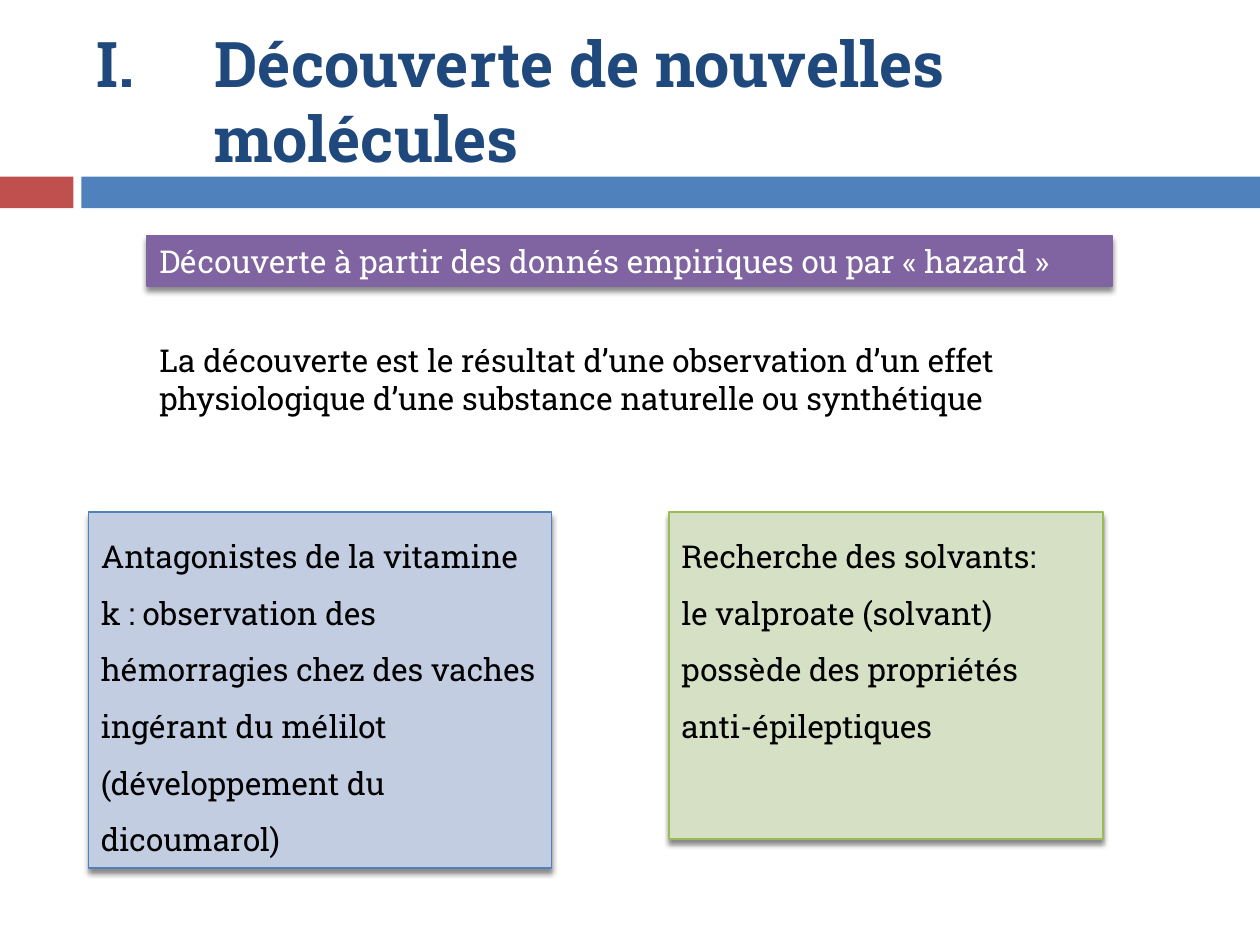
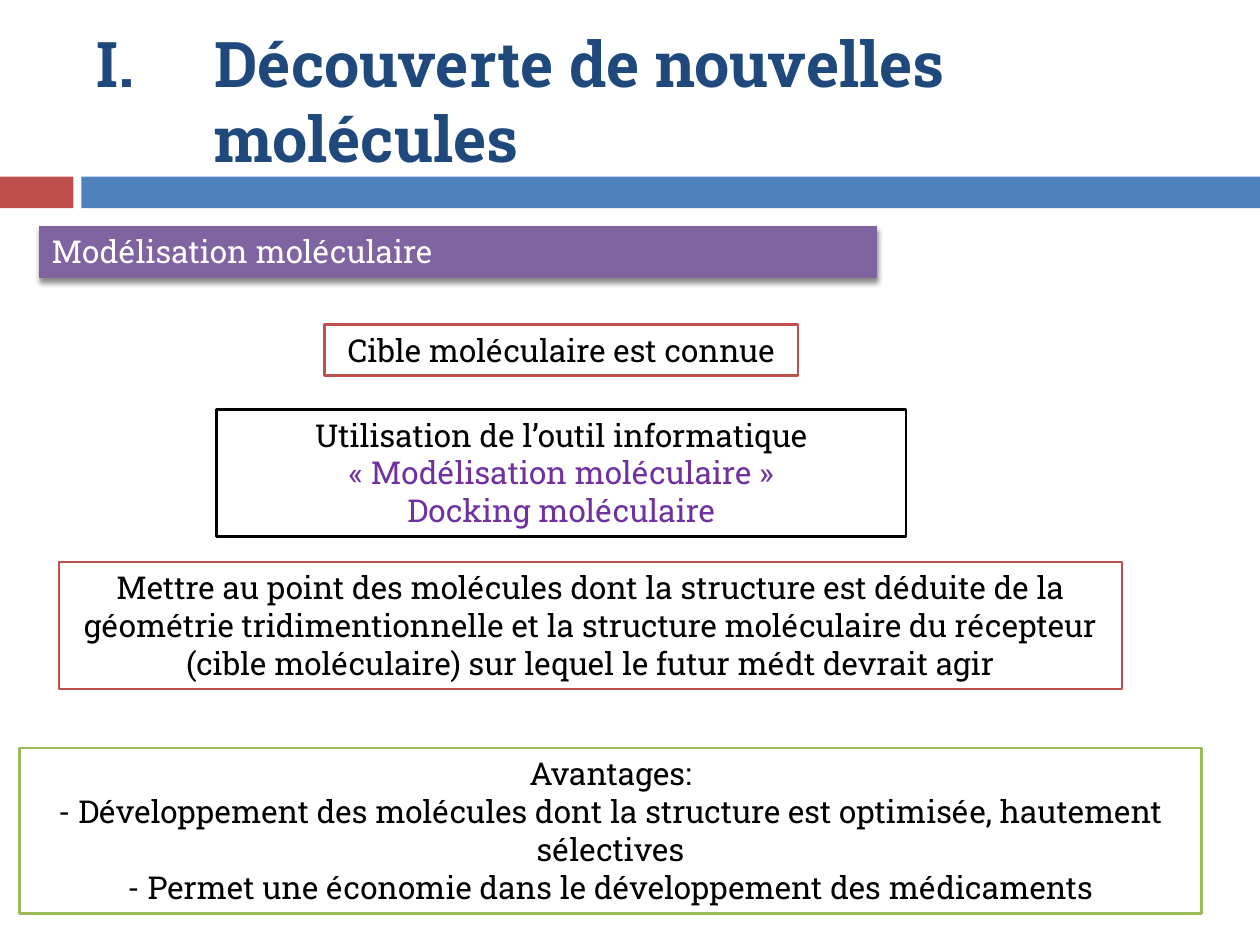
from dataclasses import dataclass

from lxml import etree
from pptx import Presentation
from pptx.dml.color import RGBColor
from pptx.enum import shapes, text
from pptx.oxml import ns
from pptx.util import Pt

FONT = "Roboto Slab"
BODY_SIZE = 18
TITLE_SIZE = 36
TITLE_INDENT = 67.5

BLACK = RGBColor(0x00, 0x00, 0x00)
WHITE = RGBColor(0xFF, 0xFF, 0xFF)
NAVY = RGBColor(0x1F, 0x49, 0x7D)
BLUE = RGBColor(0x4F, 0x81, 0xBD)
PALE_BLUE = RGBColor(0xC2, 0xCD, 0xE1)
RED = RGBColor(0xC0, 0x50, 0x4D)
GREEN = RGBColor(0x9B, 0xBB, 0x59)
PALE_GREEN = RGBColor(0xD5, 0xE0, 0xC4)
PURPLE = RGBColor(0x80, 0x64, 0xA2)
VIOLET = RGBColor(0x70, 0x30, 0xA0)

LEFT = text.PP_ALIGN.LEFT
CENTER = text.PP_ALIGN.CENTER


@dataclass(frozen=True)
class Line:
    words: str
    color: RGBColor = BLACK


@dataclass(frozen=True)
class Box:
    left: float
    top: float
    width: float
    height: float
    lines: tuple[Line, ...] = ()
    fill: RGBColor | None = None
    border: RGBColor | None = None
    border_width: float = 0.79
    align: text.PP_ALIGN = LEFT
    spacing: float = 1.0
    shadow: bool = False


def banner(left: float, top: float, width: float, words: str) -> Box:
    return Box(left, top, width, 29, (Line(words, WHITE),), PURPLE, PURPLE, shadow=True)


def example(left: float, width: float, height: float, fill: RGBColor,
            border: RGBColor, *words: str) -> Box:
    return Box(left, 292.5, width, height, tuple(map(Line, words)), fill, border,
               spacing=1.5, shadow=True)


def step(left: float, top: float, width: float, height: float,
         border: RGBColor, *lines: Line) -> Box:
    return Box(left, top, width, height, lines, WHITE, border, 1.5, CENTER)


TITLE = "Découverte de nouvelles molécules"
BANDS = (Box(0, 101, 42, 18, fill=RED), Box(46.5, 101, 673.5, 18, fill=BLUE))

EMPIRICAL = (
    banner(84, 134.5, 551.5, "Découverte à partir des donnés empiriques ou par « hazard »"),
    Box(84, 191.25, 512, 51, (Line(
        "La découverte est le résultat d’une observation d’un effet "
        "physiologique d’une substance naturelle ou synthétique"),)),
    example(50.5, 264.5, 203.5, PALE_BLUE, BLUE,
            "Antagonistes de la vitamine k : observation des hémorragies chez des "
            "vaches ingérant du mélilot (développement du dicoumarol)"),
    example(382.25, 248, 187, PALE_GREEN, GREEN,
            "Recherche des solvants:",
            "le valproate (solvant) possède des propriétés anti-épileptiques"),
)

MODELLING = (
    banner(22.5, 129.25, 478.5, "Modélisation moléculaire"),
    step(185.5, 185.5, 270.5, 29, RED, Line("Cible moléculaire est connue")),
    step(123.75, 234, 394, 72.5, BLACK,
         Line("Utilisation de l’outil informatique"),
         Line("« Modélisation moléculaire »", VIOLET),
         Line("Docking moléculaire", VIOLET)),
    step(33.75, 321.25, 607.5, 72.5, RED, Line(
        "Mettre au point des molécules dont la structure est déduite de la géométrie "
        "tridimentionnelle et la structure moléculaire du récepteur (cible moléculaire) "
        "sur lequel le futur médt devrait agir")),
    step(11.25, 427.5, 675.25, 94.5, GREEN,
         Line("Avantages:"),
         Line("- Développement des molécules dont la structure est optimisée, "
              "hautement sélectives"),
         Line("- Permet une économie dans le développement des médicaments")),
)


def add_shadow(sp) -> None:
    """Cast a soft black shadow straight down."""
    effects = sp._element.spPr.find(ns.qn("a:effectLst"))
    outer = etree.SubElement(effects, ns.qn("a:outerShdw"), blurRad=str(Pt(3)),
                             dist=str(Pt(2.4)), dir="5400000", rotWithShape="0")
    color = etree.SubElement(outer, ns.qn("a:srgbClr"), val=str(BLACK))
    etree.SubElement(color, ns.qn("a:alpha"), val="45000")


def add_run(p, words: str, size: float, color: RGBColor, bold: bool = False) -> None:
    r = p.add_run()
    r.text = words
    r.font.name = FONT
    r.font.size = Pt(size)
    r.font.bold = bold
    r.font.color.rgb = color


def add_box(s, box: Box) -> None:
    frame = map(Pt, (box.left, box.top, box.width, box.height))
    if box.fill is None:
        sp = s.shapes.add_textbox(*frame)
    else:
        sp = s.shapes.add_shape(shapes.MSO_SHAPE.RECTANGLE, *frame)
        sp.shadow.inherit = False
        sp.fill.solid()
        sp.fill.fore_color.rgb = box.fill
        if box.border is None:
            sp.line.fill.background()
        else:
            sp.line.color.rgb = box.border
            sp.line.width = Pt(box.border_width)
    if box.shadow:
        add_shadow(sp)
    tf = sp.text_frame
    tf.word_wrap = True
    tf.vertical_anchor = text.MSO_ANCHOR.TOP
    for i, line in enumerate(box.lines):
        p = tf.add_paragraph() if i else tf.paragraphs[0]
        p.alignment = box.align
        p.line_spacing = box.spacing
        add_run(p, line.words, BODY_SIZE, line.color)


def add_title(s) -> None:
    """Write the title with a hanging Roman numeral."""
    tf = s.shapes.add_textbox(Pt(48), Pt(18), Pt(642), Pt(78)).text_frame
    tf.word_wrap = True
    tf.vertical_anchor = text.MSO_ANCHOR.MIDDLE
    p = tf.paragraphs[0]
    p_pr = p._p.get_or_add_pPr()
    p_pr.set("marL", str(Pt(TITLE_INDENT)))
    p_pr.set("indent", str(-Pt(TITLE_INDENT)))
    etree.SubElement(p_pr, ns.qn("a:buFont"), typeface=FONT)
    etree.SubElement(p_pr, ns.qn("a:buAutoNum"), type="romanUcPeriod")
    add_run(p, TITLE, TITLE_SIZE, NAVY, bold=True)


def main() -> None:
    prs = Presentation()
    prs.slide_width, prs.slide_height = Pt(720), Pt(540)
    for content in (EMPIRICAL, MODELLING):
        s = prs.slides.add_slide(prs.slide_layouts[6])
        for band in BANDS:
            add_box(s, band)
        add_title(s)
        for box in content:
            add_box(s, box)
    prs.save("out.pptx")


if __name__ == "__main__":
    main()
